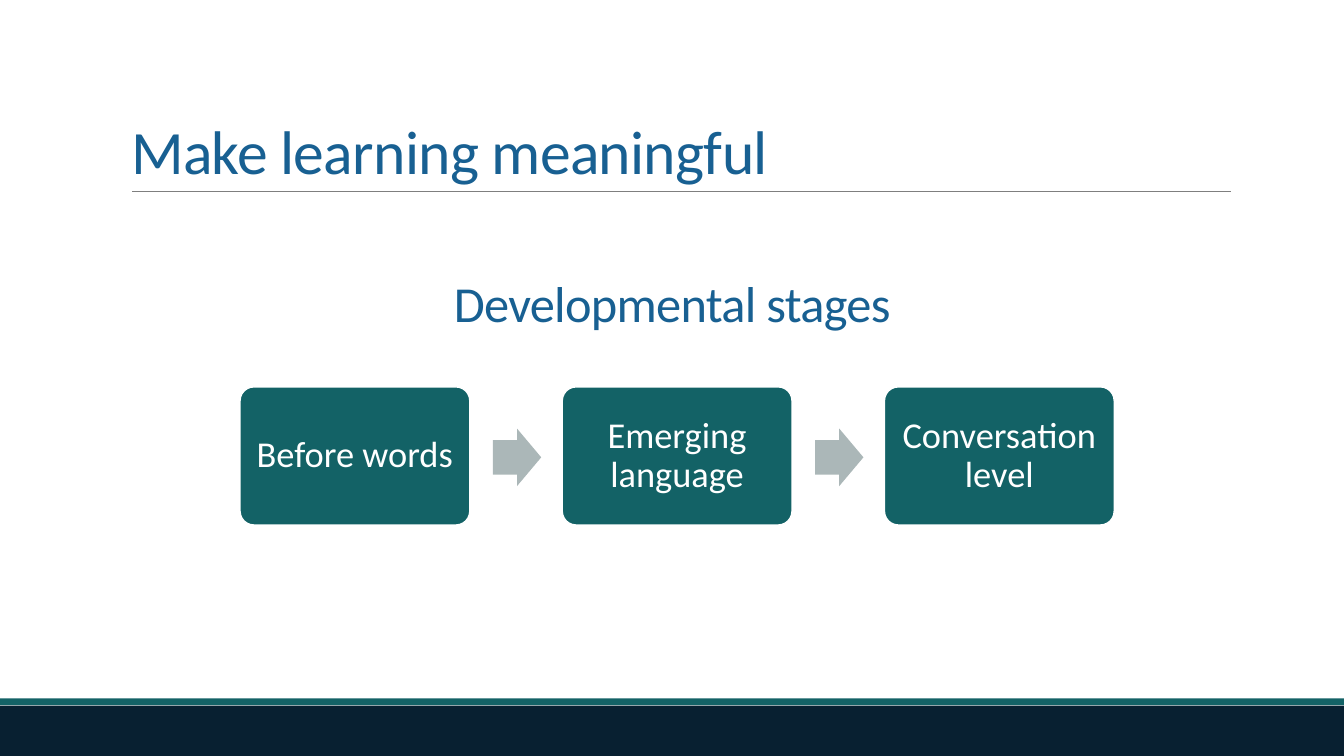
"""Build the slide on the developmental stages of meaningful learning."""
from lxml import etree
from pptx import Presentation
from pptx.dml.color import RGBColor
from pptx.enum import shapes, text
from pptx.oxml import ns
from pptx.util import Cm, Pt

COLORS = {
    "navy": "082031",
    "teal": "136266",
    "blue": "186092",
    "arrow": "ABB7B8",
    "rule": "7F7F7F",
    "white": "FFFFFF",
}
STAGES = ["Before words", "Emerging language", "Conversation level"]
STAGE_LEFT, STAGE_PITCH = 6.05, 8.12


def add_block(kind, left, top, width, height, color):
    shape = slide.shapes.add_shape(kind, Cm(left), Cm(top), Cm(width), Cm(height))
    shape.shadow.inherit = False
    shape.fill.solid()
    shape.fill.fore_color.rgb = RGBColor.from_string(COLORS[color])
    shape.line.fill.background()
    return shape


def write_text(shape, words, size, color, alignment, line_spacing=1.0, tracking=0):
    paragraph = shape.text_frame.paragraphs[0]
    paragraph.alignment = alignment
    paragraph.line_spacing = line_spacing
    run = paragraph.add_run()
    run.text = words
    run.font.name = "Calibri"
    run.font.size = Pt(size)
    run.font.color.rgb = RGBColor.from_string(COLORS[color])
    if tracking:
        run.font._element.set("spc", str(tracking))


presentation = Presentation()
presentation.slide_width = Cm(33.87)
presentation.slide_height = Cm(19.05)
slide = presentation.slides.add_slide(presentation.slide_layouts[5])

add_block(shapes.MSO_SHAPE.RECTANGLE, 0, 17.78, 33.87, 1.27, "navy")
add_block(shapes.MSO_SHAPE.RECTANGLE, 0, 17.6, 33.87, 0.17, "teal")

rule = slide.shapes.add_connector(
    shapes.MSO_CONNECTOR.STRAIGHT, Cm(3.33), Cm(4.83), Cm(31.01), Cm(4.83))
rule.line.color.rgb = RGBColor.from_string(COLORS["rule"])
rule.line.width = Pt(0.5)
etree.SubElement(rule._element.spPr, ns.qn("a:effectLst"))

title = slide.shapes.title
title.left, title.top, title.width, title.height = Cm(3.05), Cm(0.79), Cm(27.94), Cm(4.04)
title.text_frame.auto_size = text.MSO_AUTO_SIZE.NONE
title.text_frame.vertical_anchor = text.MSO_ANCHOR.BOTTOM
write_text(title, "Make learning meaningful", 44, "blue", text.PP_ALIGN.LEFT, 0.85, -50)

for index, stage in enumerate(STAGES):
    left = STAGE_LEFT + index * STAGE_PITCH
    box = add_block(shapes.MSO_SHAPE.ROUNDED_RECTANGLE, left, 9.75, 5.79, 3.48, "teal")
    box.adjustments[0] = 0.1
    box.line.color.rgb = RGBColor.from_string(COLORS["white"])
    box.line.width = Pt(1)
    frame = box.text_frame
    frame.word_wrap = True
    frame.vertical_anchor = text.MSO_ANCHOR.MIDDLE
    frame.margin_left = frame.margin_right = Cm(0.28)
    frame.margin_top = frame.margin_bottom = Cm(0.28)
    write_text(box, stage, 26, "white", text.PP_ALIGN.CENTER, 0.9)
    if index < len(STAGES) - 1:
        arrow = add_block(
            shapes.MSO_SHAPE.RIGHT_ARROW, left + 6.37, 10.8, 1.22, 1.45, "arrow")
        arrow.adjustments[0] = 0.6
        arrow.adjustments[1] = 0.5

subtitle = slide.shapes.add_textbox(Cm(6.93), Cm(6.73), Cm(20.02), Cm(1.8))
subtitle.text_frame.word_wrap = True
subtitle.text_frame.auto_size = text.MSO_AUTO_SIZE.SHAPE_TO_FIT_TEXT
write_text(subtitle, "Developmental stages", 36, "blue", text.PP_ALIGN.CENTER, tracking=-50)

presentation.save("out.pptx")
